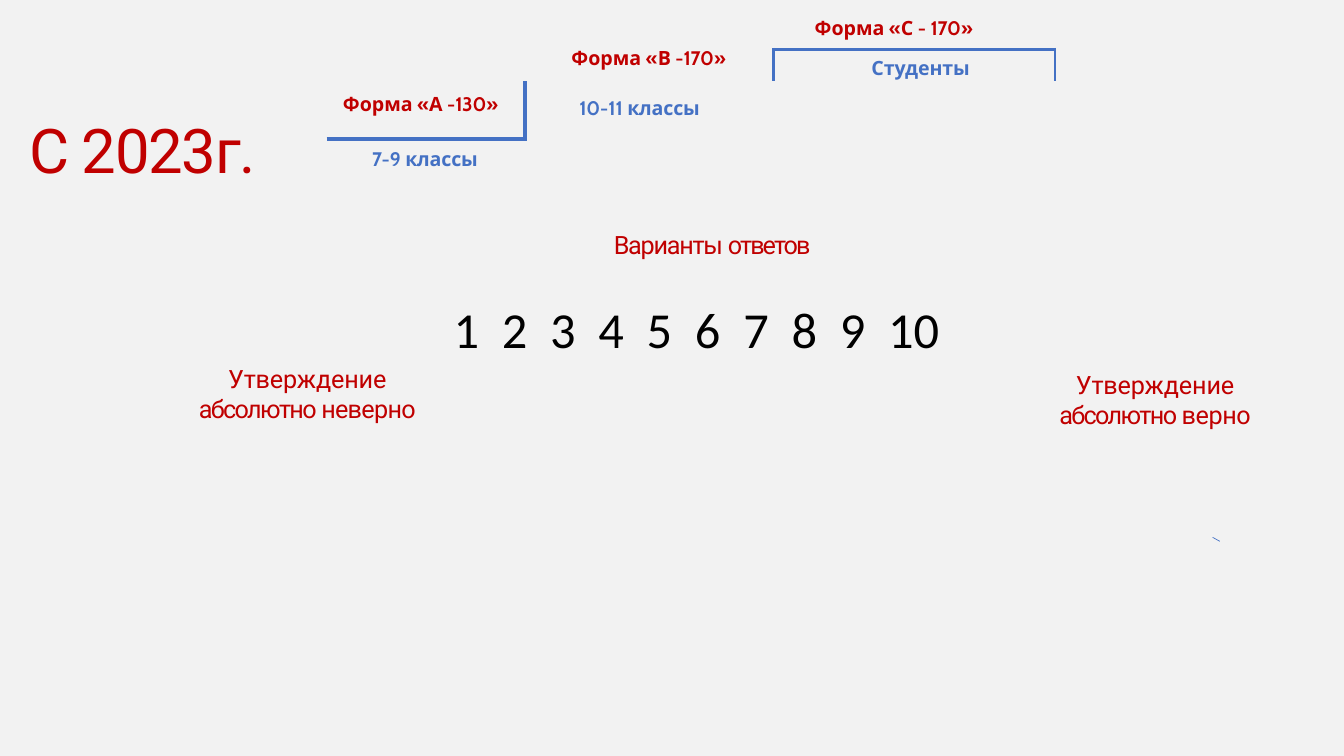
from dataclasses import dataclass

from lxml.etree import SubElement
from pptx import Presentation
from pptx.dml.color import RGBColor
from pptx.enum.shapes import MSO_CONNECTOR
from pptx.enum.text import PP_ALIGN
from pptx.oxml.ns import qn
from pptx.util import Cm, Pt


@dataclass(frozen=True)
class Theme:
    background: str = "F2F2F2"
    red: str = "C00000"
    blue: str = "4471C4"
    black: str = "000000"
    heading: str = "Roboto"
    label: str = "Cabin"
    digits: str = "Calibri"
    title_size: int = 44
    scale_size: int = 36
    answer_size: int = 18
    label_size: int = 14


T = Theme()
NO_STYLE = "{2D5ABB26-0587-4C30-8999-92F81FD0307C}"


def rgb(value):
    return RGBColor.from_string(value)


def write(tf, *lines, size, font, color, bold=False, align=None,
          spacing=None, before=1):
    """Each line is a list of (text, letter spacing in points) pairs."""
    for i, line in enumerate(lines):
        p = tf.paragraphs[0] if i == 0 else tf.add_paragraph()
        p.alignment = align
        p.space_before = Pt(before if i == 0 else 0)
        if spacing:
            p.line_spacing = Pt(spacing)
        for text, tracking in line:
            r = p.add_run()
            r.text = text
            r.font.size, r.font.name, r.font.bold = Pt(size), font, bold
            r.font.color.rgb = rgb(color)
            if tracking:
                r.font._element.set("spc", str(round(tracking * 100)))


def add_text(s, box, *lines, inset=(0.03, 0.03, 0, 0), **style):
    sp = s.shapes.add_textbox(*map(Cm, box))
    tf = sp.text_frame
    tf.word_wrap = True
    (tf.margin_left, tf.margin_top,
     tf.margin_right, tf.margin_bottom) = map(Cm, inset)
    write(tf, *lines, **style)
    return tf


def set_borders(cell, borders):
    """Borders maps a side (L, R, T, B) to a width in points."""
    tc_pr = cell._tc.get_or_add_tcPr()
    for side in "LRTB":
        if side in borders:
            ln = SubElement(tc_pr, qn(f"a:ln{side}"), w=str(Pt(borders[side])))
            fill = SubElement(ln, qn("a:solidFill"))
            SubElement(fill, qn("a:srgbClr"), val=T.blue)


def add_forms(s, box):
    x, y, w, h = box
    label = dict(size=T.label_size, font=T.label, bold=True)
    col_widths, row_heights = (5.0, 5.97, w - 10.97), (0.81, 1.45)

    frame = s.shapes.add_table(2, 3, Cm(x), Cm(y + 0.86), Cm(w),
                               Cm(sum(row_heights)))
    table = frame.table
    table.first_row = table.horz_banding = False
    table._tbl.tblPr.find(qn("a:tableStyleId")).text = NO_STYLE
    for col, width in zip(table.columns, col_widths):
        col.width = Cm(width)
    for row, height in zip(table.rows, row_heights):
        row.height = Cm(height)
    table.cell(0, 0).merge(table.cell(0, 1))
    table.cell(1, 1).merge(table.cell(1, 2))

    # row, column, left and top margin, runs, colour, spacing, borders
    cells = [
        (0, 0, 6.17, 0, [("Форма «В ", 0), ("-", -0.1), ("170»", -0.2)],
         T.red, dict(spacing=15.2, before=0), {}),
        (0, 2, 2.46, 0.36, [("Студенты", -0.1)],
         T.blue, dict(spacing=12.3, before=9.8),
         {"L": 2.25, "R": 2.25, "T": 2.25}),
        (1, 0, 0.41, 0.28, [("Форма «А", 0), (" -", -0.1), ("130»", -0.2)],
         T.red, dict(before=7.6), {"R": 3, "B": 3}),
        (1, 1, 1.37, 0.38, [("10-", -0.1), ("11 ", 0), ("классы", -0.1)],
         T.blue, dict(before=10.6), {"L": 3}),
    ]
    for row, col, left, top, runs, color, spacing, borders in cells:
        cell = table.cell(row, col)
        cell.margin_left, cell.margin_top = Cm(left), Cm(top)
        cell.margin_right = cell.margin_bottom = 0
        write(cell.text_frame, runs, color=color, **label, **spacing)
        set_borders(cell, borders)
        cell.fill.background()

    add_text(s, (x + 1.12, y + 3.28, 2.92, 0.66),
             [("7-", -0.1), ("9", 0), (" классы", -0.1)],
             color=T.blue, **label)
    add_text(s, (x + 12.27, y, 4.39, 0.66),
             [("Форма «С - ", 0), ("170»", -0.2)], color=T.red, **label)


def add_answer_scale(s, box):
    x, y, w, h = box
    answer = dict(size=T.answer_size, font=T.heading, color=T.red)
    add_text(s, (x + 10.44, y, 5.05, 0.84),
             [("Варианты ", -0.9), ("ответов", -1.4)], **answer)

    tf = add_text(s, (x + 6.18, y + 1.65, 13.72, 1.8),
                  [("\t".join(str(n) for n in range(1, 11)), 0)],
                  inset=(0.25, 0.13, 0.25, 0.13), size=T.scale_size,
                  font=T.digits, color=T.black, before=0)
    stops = SubElement(tf.paragraphs[0]._p.get_or_add_pPr(), qn("a:tabLst"))
    for n in range(1, 10):
        SubElement(stops, qn("a:tab"), pos=str(Cm(1.217 * n)), algn="l")

    add_text(s, (x, y + 3.4, 5.49, 1.57),
             [("Утверждение", -0.1)],
             [("абсолютно ", -1.2), ("неверно", -0.5)],
             inset=(0, 0.03, 0, 0), align=PP_ALIGN.CENTER, spacing=21.2,
             **answer)
    add_text(s, (x + w - 6.4, y + 3.53, 6.4, 1.5),
             [("Утверждение", -0.1)],
             [("абсолютно ", -1.2), ("верно", -0.3)],
             inset=(0, 0.03, 0, 0), align=PP_ALIGN.CENTER, **answer)


def add_tick(s, box):
    x, y, w, h = box
    line = s.shapes.add_connector(MSO_CONNECTOR.STRAIGHT, Cm(x), Cm(y),
                                  Cm(x + w), Cm(y + h))
    line.line.color.rgb = rgb(T.blue)
    line.line.width = Pt(0.5)
    SubElement(line._element.spPr, qn("a:effectLst"))


def main():
    prs = Presentation()
    prs.slide_width, prs.slide_height = Cm(33.87), Cm(19.05)
    s = prs.slides.add_slide(prs.slide_layouts[6])
    s.background.fill.solid()
    s.background.fill.fore_color.rgb = rgb(T.background)
    add_text(s, (0.71, 2.79, 5.79, 1.9), [("С 2023г.", -1)],
             size=T.title_size, font=T.heading, color=T.red)
    add_forms(s, (8.23, 0.38, 18.06, 3.94))
    add_answer_scale(s, (5, 5.74, 27.31, 5.03))
    add_tick(s, (30.56, 13.54, 0.18, 0.1))
    prs.save("out.pptx")


if __name__ == "__main__":
    main()
